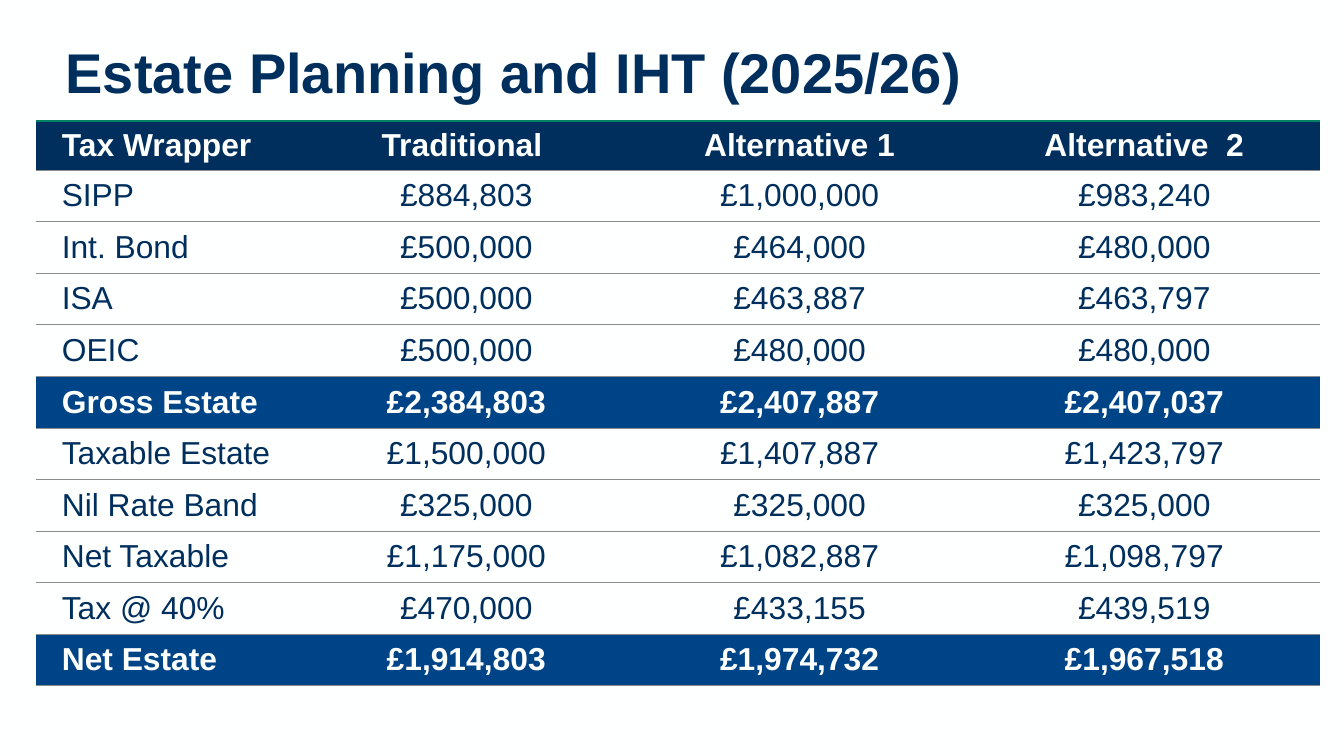
from lxml import etree
from pptx import Presentation
from pptx.dml.color import RGBColor
from pptx.enum.text import MSO_ANCHOR as Anchor, PP_ALIGN as Align
from pptx.oxml.ns import qn
from pptx.util import Inches, Pt

NAVY = RGBColor(0x00, 0x2F, 0x5E)
BLUE = RGBColor(0x00, 0x44, 0x88)
GREEN = RGBColor(0x00, 0x82, 0x64)
GREY = RGBColor(0x89, 0x8D, 0x8D)
WHITE = RGBColor(0xFE, 0xFF, 0xFF)

COLUMN_WIDTHS = (1.98, 2.44, 2.52, 2.61)
HEADER_HEIGHT, ROW_HEIGHT = 0.36, 0.38
TOTALS = ("Gross Estate", "Net Estate")
ESTATE = (
    ("Tax Wrapper", "Traditional ", "Alternative 1", "Alternative  2"),
    ("SIPP", "£884,803", "£1,000,000", "£983,240"),
    ("Int. Bond", "£500,000", "£464,000", "£480,000"),
    ("ISA", "£500,000", "£463,887", "£463,797"),
    ("OEIC", "£500,000", "£480,000", "£480,000"),
    ("Gross Estate", "£2,384,803", "£2,407,887", "£2,407,037"),
    ("Taxable Estate", "£1,500,000", "£1,407,887", "£1,423,797"),
    ("Nil Rate Band", "£325,000", "£325,000", "£325,000"),
    ("Net Taxable", "£1,175,000", "£1,082,887", "£1,098,797"),
    ("Tax @ 40%", "£470,000", "£433,155", "£439,519"),
    ("Net Estate", "£1,914,803", "£1,974,732", "£1,967,518"),
)


def write(text_frame, text, size=17, color=NAVY, bold=False, align=Align.LEFT,
          font="Arial", line_spacing=None):
    paragraph = text_frame.paragraphs[0]
    paragraph.alignment = align
    paragraph.line_spacing = line_spacing
    run = paragraph.add_run()
    run.text = text
    run.font.name = font
    run.font.size = Pt(size)
    run.font.bold = bold
    run.font.color.rgb = color


def set_borders(cell, top, bottom):
    """Draw the top and bottom edges, each a (color, points) pair, and hide the sides."""
    properties = cell._tc.get_or_add_tcPr()
    edges = (("a:lnL", None), ("a:lnR", None), ("a:lnT", top), ("a:lnB", bottom))
    for index, (tag, style) in enumerate(edges):
        line = etree.Element(qn(tag))
        if style is None:
            etree.SubElement(line, qn("a:noFill"))
        else:
            color, points = style
            line.set("w", str(Pt(points)))
            fill = etree.SubElement(line, qn("a:solidFill"))
            etree.SubElement(fill, qn("a:srgbClr"), val=str(color))
        properties.insert(index, line)


class SlideBuilder:
    def __init__(self, slide):
        self.slide = slide
        slide.background.fill.solid()
        slide.background.fill.fore_color.rgb = WHITE

    def title(self, text, left, top, width, height):
        box = self.slide.shapes.add_textbox(
            Inches(left), Inches(top), Inches(width), Inches(height))
        frame = box.text_frame
        frame.word_wrap = True
        frame.vertical_anchor = Anchor.MIDDLE
        frame.margin_bottom = Inches(0.08)
        write(frame, text, size=30, bold=True, line_spacing=Pt(31))

    def table(self, rows, left, top):
        height = HEADER_HEIGHT + ROW_HEIGHT * (len(rows) - 1)
        table = self.slide.shapes.add_table(
            len(rows), len(COLUMN_WIDTHS), Inches(left), Inches(top),
            Inches(sum(COLUMN_WIDTHS)), Inches(height)).table
        table.horz_banding = False
        table.first_row = False
        for column, width in zip(table.columns, COLUMN_WIDTHS):
            column.width = Inches(width)
        for row_index, values in enumerate(rows):
            table.rows[row_index].height = Inches(ROW_HEIGHT if row_index else HEADER_HEIGHT)
            for column_index, text in enumerate(values):
                self.cell(table.cell(row_index, column_index), text,
                          is_header=row_index == 0,
                          is_total=values[0] in TOTALS,
                          is_label=column_index == 0,
                          is_last=row_index == len(rows) - 1)

    def cell(self, cell, text, is_header, is_total, is_label, is_last):
        emphasised = is_header or is_total
        narrow = is_header or is_label
        cell.vertical_anchor = Anchor.MIDDLE
        cell.margin_left = Inches(0.19 if is_label else 0.1 if narrow else 0.13)
        cell.margin_right = Inches(0.1 if narrow else 0.13)
        cell.margin_top = cell.margin_bottom = Inches(0.04 if narrow else 0.05)
        if emphasised:
            cell.fill.solid()
            cell.fill.fore_color.rgb = NAVY if is_header else BLUE
        else:
            cell.fill.background()
        set_borders(cell, top=(GREEN, 1) if is_header else (GREY, 0.25),
                    bottom=(GREY, 0.5 if is_last else 0.25))
        write(cell.text_frame, text, color=WHITE if emphasised else NAVY,
              bold=emphasised, align=Align.LEFT if is_label else Align.CENTER)


def main():
    presentation = Presentation()
    presentation.slide_width = Inches(10)
    presentation.slide_height = Inches(10) * 9 // 16
    builder = SlideBuilder(presentation.slides.add_slide(presentation.slide_layouts[6]))
    builder.title("Estate Planning and IHT (2025/26)", 0.39, 0.3, 9.31, 0.56)
    builder.table(ESTATE, 0.27, 0.9)
    presentation.save("out.pptx")


if __name__ == "__main__":
    main()
